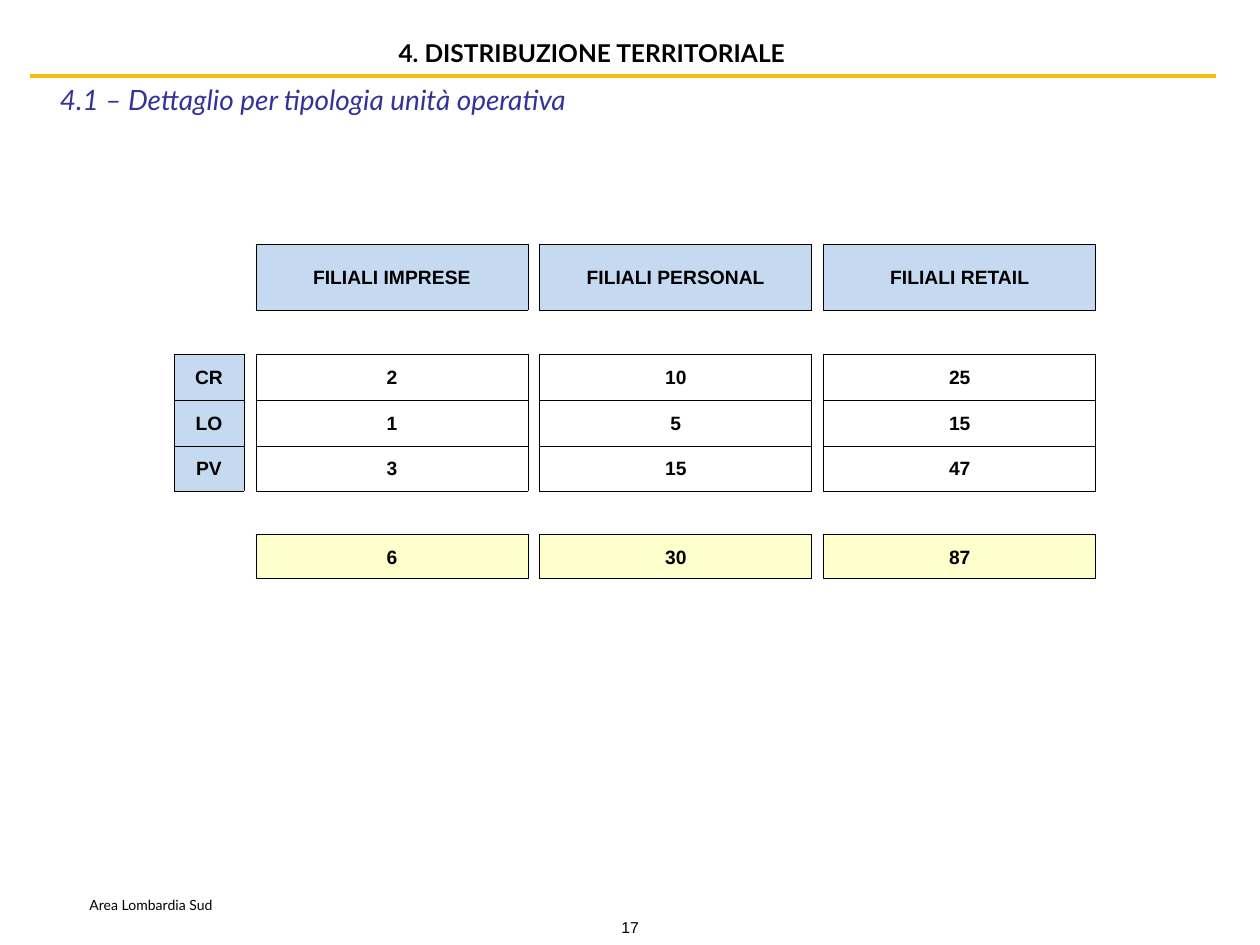
from lxml import etree
from pptx import Presentation
from pptx.dml.color import RGBColor
from pptx.enum.shapes import MSO_CONNECTOR
from pptx.enum.text import MSO_ANCHOR, MSO_AUTO_SIZE, PP_ALIGN
from pptx.oxml import parse_xml
from pptx.oxml.ns import nsdecls, qn
from pptx.util import Pt

PX = 914400 / 126
LINE = MSO_CONNECTOR.STRAIGHT
LEFT, CENTER = PP_ALIGN.LEFT, PP_ALIGN.CENTER
TOP, MIDDLE = MSO_ANCHOR.TOP, MSO_ANCHOR.MIDDLE
NO_FIT = MSO_AUTO_SIZE.NONE
NO_STYLE = "{2D5ABB26-0587-4C30-8999-92F81FD0307C}"
BLUE, YELLOW = "C5D9F1", "FFFFCC"


def px(n):
    return round(n * PX)


def set_text(tf, text, size, font, color="000000", bold=False, italic=False, align=CENTER):
    tf.text = text
    p = tf.paragraphs[0]
    p.alignment = align
    f = p.runs[0].font
    f.size, f.name, f.bold, f.italic = Pt(size), font, bold, italic
    f.color.rgb = RGBColor.from_string(color)


prs = Presentation()
prs.slide_width, prs.slide_height = px(1260), px(945)
s = prs.slides.add_slide(prs.slide_layouts[5])

title = s.shapes.title
title.left, title.top, title.width, title.height = px(362), px(32), px(460), px(43)
tf = title.text_frame
tf.auto_size, tf.word_wrap, tf.vertical_anchor = NO_FIT, False, TOP
set_text(tf, "4. DISTRIBUZIONE TERRITORIALE", 14, "Lato", bold=True)

rule = s.shapes.add_connector(LINE, px(30), px(76), px(1216), px(76))
rule.line.width = Pt(2.25)
rule.line.color.rgb = RGBColor.from_string("F3C10B")
etree.SubElement(rule._element.spPr, qn("a:effectLst"))

boxes = [
    (0, 76, 626, 47, "4.1 – Dettaglio per tipologia unità operativa", 16, "Lato", "333399", True, CENTER),
    (77, 890, 156, 30, "Area Lombardia Sud", 8, "Lato", "000000", False, LEFT),
    (483, 912, 294, 65, "17", 9, "Arial", "000000", False, CENTER),
]
for x, y, w, h, text, size, font, color, italic, align in boxes:
    tf = s.shapes.add_textbox(px(x), px(y), px(w), px(h)).text_frame
    tf.word_wrap = True
    set_text(tf, text, size, font, color, italic=italic, align=align)

col_widths = [70] + [12, 91, 90, 91] * 3
row_heights = [66, 44, 46, 46, 45, 44, 44]
rows = {
    0: (["", "FILIALI IMPRESE", "FILIALI PERSONAL", "FILIALI RETAIL"], BLUE),
    2: (["CR", "2", "10", "25"], None),
    3: (["LO", "1", "5", "15"], None),
    4: (["PV", "3", "15", "47"], None),
    6: (["", "6", "30", "87"], YELLOW),
}
frame = s.shapes.add_table(len(row_heights), len(col_widths), px(174), px(244),
                           px(sum(col_widths)), px(sum(row_heights)))
table = frame.table
table.first_row = table.horz_banding = False
table._tbl.tblPr.find(qn("a:tableStyleId")).text = NO_STYLE
for col, w in zip(table.columns, col_widths):
    col.width = px(w)
for row, h in zip(table.rows, row_heights):
    row.height = px(h)
for cell in table.iter_cells():
    cell.margin_left = cell.margin_right = cell.margin_top = px(1)
    cell.margin_bottom = 0
    cell.vertical_anchor = MIDDLE
    cell.fill.background()

for r, (texts, row_fill) in rows.items():
    for i, text in enumerate(texts):
        if not text:
            continue
        c = max(0, 4 * i - 2)
        span = 3 if i else 1
        if i:
            table.cell(r, c).merge(table.cell(r, c + 2))
        set_text(table.cell(r, c).text_frame, text, 11, "Arial", bold=True)
        fill = row_fill if i else BLUE
        for k in range(c, c + span):
            cell = table.cell(r, k)
            tc_pr = cell._tc.get_or_add_tcPr()
            for n, side in enumerate("LRTB"):
                tc_pr.insert(n, parse_xml(
                    f'<a:ln{side} {nsdecls("a")} w="6350"><a:solidFill>'
                    f'<a:srgbClr val="000000"/></a:solidFill></a:ln{side}>'))
            if fill:
                cell.fill.solid()
                cell.fill.fore_color.rgb = RGBColor.from_string(fill)

prs.save("out.pptx")
